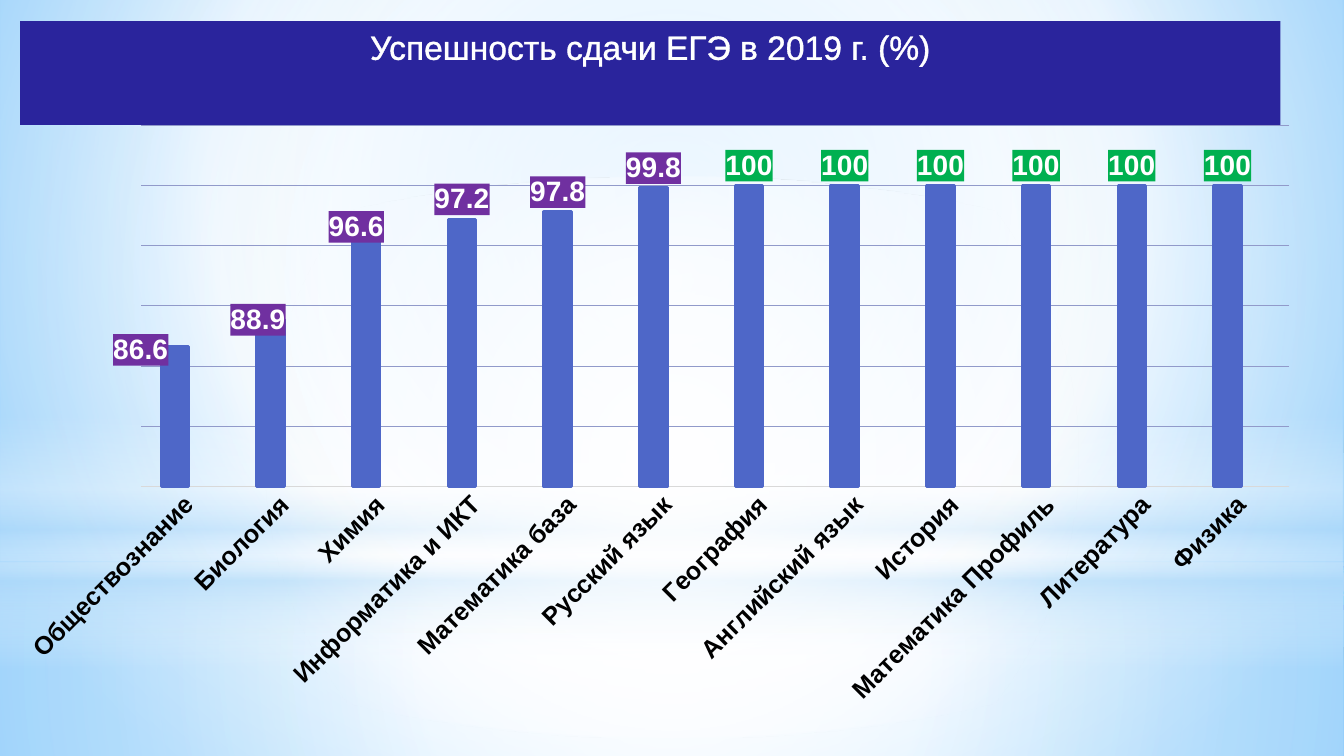
from lxml.etree import SubElement
from pptx import Presentation
from pptx.chart.data import CategoryChartData
from pptx.dml.color import RGBColor
from pptx.enum.chart import XL_CHART_TYPE, XL_LABEL_POSITION, XL_TICK_MARK
from pptx.enum.shapes import MSO_SHAPE
from pptx.enum.text import MSO_ANCHOR, PP_ALIGN
from pptx.oxml import parse_xml
from pptx.oxml.ns import nsdecls, qn
from pptx.util import Inches, Pt

WHITE, PALE, PURPLE, GREEN = "FFFFFF", "B4DCFA", "7030A0", "00B050"


def color(hex_value):
    return RGBColor.from_string(hex_value)


def paint_gradient(properties, stops, focus=None):
    """Replace noFill by a gradient of (position, colour, opacity) stops.

    focus gives left, top, right, bottom of a circular one; without it the
    gradient runs downwards."""
    listed = "".join(
        f'<a:gs pos="{position * 1000}"><a:srgbClr val="{tone}">'
        f'<a:alpha val="{opacity * 1000}"/></a:srgbClr></a:gs>'
        for position, tone, opacity in stops)
    if focus:
        left, top, right, bottom = (side * 1000 for side in focus)
        direction = (f'<a:path path="circle"><a:fillToRect l="{left}" t="{top}" '
                     f'r="{right}" b="{bottom}"/></a:path>')
    else:
        direction = '<a:lin ang="5400000" scaled="0"/>'
    gradient = parse_xml(f'<a:gradFill {nsdecls("a")} rotWithShape="1">'
                         f'<a:gsLst>{listed}</a:gsLst>{direction}</a:gradFill>')
    empty_fill = properties.find(qn("a:noFill"))
    properties.replace(empty_fill, gradient)


deck = Presentation()
deck.slide_width, deck.slide_height = Inches(13.33), Inches(7.5)
page = deck.slides.add_slide(deck.slide_layouts[5])

# Background glow
page.background.fill.background()
paint_gradient(page._element.find(".//" + qn("p:bgPr")),
               [(0, "9ED5FF", 100), (60, WHITE, 100), (100, "5BB9FF", 100)],
               (20, 10, 20, 60))
CENTER = (50, 50, 50, 50)
glows = [
    (MSO_SHAPE.RECTANGLE, 5.58, 1.92,
     [(0, WHITE, 91), (37, WHITE, 76), (100, PALE, 79)], CENTER),
    (MSO_SHAPE.RECTANGLE, 0, 5.58,
     [(0, WHITE, 89), (48, WHITE, 62), (100, PALE, 79)], CENTER),
    (MSO_SHAPE.RECTANGLE, 4.12, 2.5,
     [(0, WHITE, 0), (29, WHITE, 30), (45, PALE, 40), (55, WHITE, 26),
      (65, PALE, 60), (100, WHITE, 0)], None),
    (MSO_SHAPE.OVAL, 1.75, 5.58, [(0, WHITE, 100), (56, WHITE, 0)], CENTER),
]
for kind, top, height, stops, focus in glows:
    glow = page.shapes.add_shape(kind, 0, Inches(top), deck.slide_width, Inches(height))
    glow.shadow.inherit = False
    glow.line.fill.background()
    glow.fill.background()
    paint_gradient(glow._element.spPr, stops, focus)

# Title band, in front of the glow
title = page.shapes.title
page.shapes._spTree.append(title._element)
title.left, title.top = Inches(0.2), Inches(0.21)
title.width, title.height = Inches(12.5), Inches(1.03)
title.fill.solid()
title.fill.fore_color.rgb = color("2A249C")
title.text_frame.vertical_anchor = MSO_ANCHOR.TOP
para = title.text_frame.paragraphs[0]
para.alignment = PP_ALIGN.CENTER
span = para.add_run()
span.text = "Успешность сдачи ЕГЭ в 2019 г. (%)"
span.font.name, span.font.size = "Arial", Pt(24)
span.font.color.rgb = color(WHITE)
span.font._element.insert(0, parse_xml(
    f'<a:ln {nsdecls("a")} w="18415"><a:solidFill><a:srgbClr val="{WHITE}"/>'
    '</a:solidFill></a:ln>'))

# Chart
results = [
    ("Обществознание", 86.6), ("Биология", 88.9), ("Химия", 96.6),
    ("Информатика и ИКТ", 97.2), ("Математика база", 97.8),
    ("Русский язык", 99.8), ("География", 100), ("Английский язык", 100),
    ("История", 100), ("Математика Профиль", 100), ("Литература", 100),
    ("Физика", 100),
]
chart_data = CategoryChartData()
chart_data.categories = [subject for subject, score in results]
chart_data.add_series("Series 1", [score for subject, score in results])
chart_data.add_series("Series 2", [None] * len(results))
chart = page.shapes.add_chart(
    XL_CHART_TYPE.COLUMN_CLUSTERED, Inches(0.2), Inches(1.12),
    Inches(12.59), Inches(6.1), chart_data).chart
chart.has_title = chart.has_legend = False
chart.font.name, chart.font.size = "Arial", Pt(10)
chart.font.color.rgb = color("000000")

plot_area = chart._chartSpace.chart.plotArea
for old_layout in plot_area.findall(qn("c:layout")):
    plot_area.remove(old_layout)
plot_layout = parse_xml(f'<c:layout {nsdecls("c")}><c:manualLayout/></c:layout>')
for tag, value in [("layoutTarget", "inner"), ("xMode", "edge"), ("yMode", "edge"),
                   ("x", 0.095), ("y", 0.02), ("w", 0.905), ("h", 0.588)]:
    SubElement(plot_layout[0], qn("c:" + tag)).set("val", str(value))
plot_area.insert(0, plot_layout)

subjects = chart.category_axis
subjects.major_tick_mark = subjects.minor_tick_mark = XL_TICK_MARK.NONE
subjects.format.line.color.rgb = color("D9D9D9")
subjects.format.line.width = Pt(0.75)
subject_font = subjects.tick_labels.font
subject_font.name, subject_font.size, subject_font.bold = "Arial", Pt(18), True
subject_font.color.rgb = color("000000")
subjects._element.find(".//" + qn("a:bodyPr")).set("rot", "-2700000")

scores = chart.value_axis
scores.minimum_scale, scores.maximum_scale, scores.major_unit = 75, 105, 5
scores.visible = False
scores.has_major_gridlines = True
scores.major_gridlines.format.line.color.rgb = color("919ACA")
scores.major_gridlines.format.line.width = Pt(0.75)

plot = chart.plots[0]
plot.gap_width, plot.overlap, plot.vary_by_categories = 150, 0, False
for series, tone in zip(plot.series, ("4E67C8", "5ECCF3")):
    series.format.fill.solid()
    series.format.fill.fore_color.rgb = color(tone)
    series.format.line.color.rgb = color(tone)
    series.format.line.width = Pt(2.25)

# Score labels: green for a full score, the first three shifted onto their bars
shifts = {0: (-0.027, 0.037), 1: (-0.01, 0.033), 2: (-0.008, 0.033)}
for index, (subject, score) in enumerate(results):
    label = plot.series[0].points[index].data_label
    label.font.name, label.font.size, label.font.bold = "Arial", Pt(20), True
    label.font.color.rgb = color(WHITE)
    label.position = XL_LABEL_POSITION.OUTSIDE_END
    element = plot.series[0]._element.findall(".//" + qn("c:dLbl"))[index]
    for old_fill in element.findall(qn("c:spPr")):
        element.remove(old_fill)
    tone = GREEN if score == 100 else PURPLE
    element.find(qn("c:txPr")).addprevious(parse_xml(
        f'<c:spPr {nsdecls("c", "a")}><a:solidFill><a:srgbClr val="{tone}"/>'
        '</a:solidFill></c:spPr>'))
    if index in shifts:
        across, down = shifts[index]
        element.find(qn("c:idx")).addnext(parse_xml(
            f'<c:layout {nsdecls("c")}><c:manualLayout><c:x val="{across}"/>'
            f'<c:y val="{down}"/></c:manualLayout></c:layout>'))

deck.save("out.pptx")
